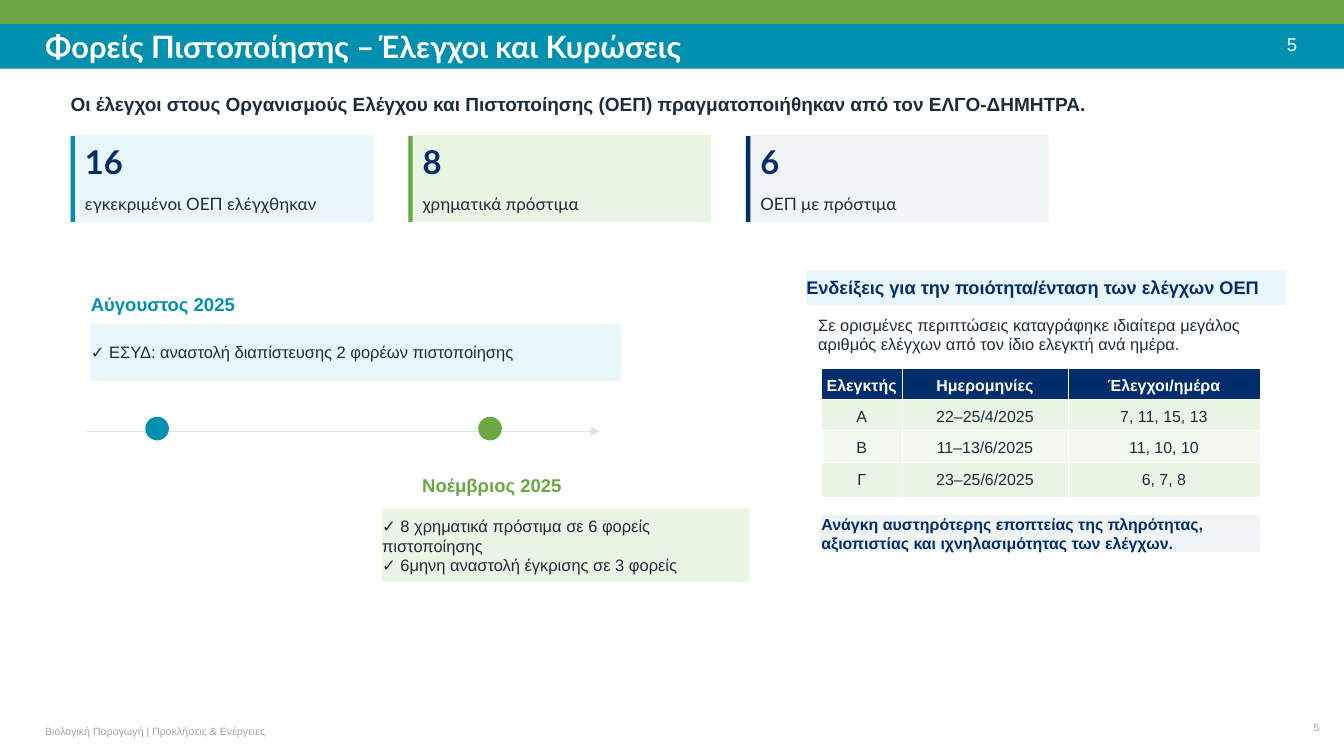
from lxml import etree
from pptx import Presentation
from pptx.dml.color import RGBColor
from pptx.enum.shapes import MSO_CONNECTOR, MSO_SHAPE
from pptx.enum.text import MSO_ANCHOR, PP_ALIGN
from pptx.oxml.ns import qn
from pptx.util import Cm, Pt

RECT, OVAL = MSO_SHAPE.RECTANGLE, MSO_SHAPE.OVAL
STRAIGHT = MSO_CONNECTOR.STRAIGHT
MIDDLE = MSO_ANCHOR.MIDDLE
LEFT, CENTER, RIGHT = PP_ALIGN.LEFT, PP_ALIGN.CENTER, PP_ALIGN.RIGHT

WHITE = RGBColor(0xFF, 0xFF, 0xFF)
GREEN = RGBColor(0x6B, 0xA8, 0x43)
TEAL = RGBColor(0x00, 0x90, 0xAF)
NAVY = RGBColor(0x00, 0x2E, 0x6D)
INK = RGBColor(0x1D, 0x2C, 0x3B)
PALE_TEAL = RGBColor(0xE9, 0xF6, 0xFA)
PALE_GREEN = RGBColor(0xEA, 0xF5, 0xE4)
FAINT_GREEN = RGBColor(0xF3, 0xF8, 0xF0)
PALE_GREY = RGBColor(0xF2, 0xF5, 0xF6)
AXIS_GREY = RGBColor(0xD7, 0xE3, 0xE5)
FOOTER_GREY = RGBColor(0x9B, 0xA8, 0xAF)


def add_block(kind, box, fill, outline=None):
    """Add a filled shape at box (cm), with a same-coloured outline in points if given."""
    shape = slide.shapes.add_shape(kind, *map(Cm, box))
    shape.shadow.inherit = False
    shape.fill.solid()
    shape.fill.fore_color.rgb = fill
    if outline:
        shape.line.color.rgb = fill
        shape.line.width = Pt(outline)
    else:
        shape.line.fill.background()
    return shape


def write(text, box=None, frame=None, size=11.4, color=INK, bold=False, font="Arial", align=LEFT):
    """Write text, one paragraph a line, into frame or a new text box at box (cm)."""
    if frame is None:
        frame = slide.shapes.add_textbox(*map(Cm, box)).text_frame
    frame.word_wrap = True
    frame.vertical_anchor = MIDDLE
    frame.margin_left = frame.margin_right = frame.margin_top = frame.margin_bottom = 0
    frame.text = text
    for paragraph in frame.paragraphs:
        paragraph.alignment = align
        for run in paragraph.runs:
            run.font.name = font
            run.font.size = Pt(size)
            run.font.bold = bold
            run.font.color.rgb = color


prs = Presentation()
prs.slide_width, prs.slide_height = Cm(33.87), Cm(19.05)
slide = prs.slides.add_slide(prs.slide_layouts[5])

# Header
title = slide.shapes.title
title.left, title.top, title.width, title.height = Cm(1.14), Cm(0.64), Cm(26.92), Cm(1.07)
for top, height, fill in [(0, 0.61, GREEN), (0.61, 1.12, TEAL)]:
    band = add_block(RECT, (0, top, 33.87, height), fill)
    title.element.addprevious(band.element)
write("Φορείς Πιστοποίησης – Έλεγχοι και Κυρώσεις", frame=title.text_frame,
      size=22, color=WHITE, bold=True, font="Lato")
write("5", (31.88, 0.81, 0.81, 0.61), size=13.2, color=WHITE, align=RIGHT)
write("Οι έλεγχοι στους Οργανισμούς Ελέγχου και Πιστοποίησης (ΟΕΠ) "
      "πραγματοποιήθηκαν από τον ΕΛΓΟ-ΔΗΜΗΤΡΑ.",
      (1.78, 1.96, 30.61, 1.32), size=13.6, bold=True)

# Key figures
figures = [
    ("16", "εγκεκριμένοι ΟΕΠ ελέγχθηκαν", TEAL, PALE_TEAL),
    ("8", "χρηματικά πρόστιμα", GREEN, PALE_GREEN),
    ("6", "ΟΕΠ με πρόστιμα", NAVY, PALE_GREY),
]
for i, (number, label, accent, fill) in enumerate(figures):
    left = 1.78 + 8.51 * i
    add_block(RECT, (left, 3.43, 7.62, 2.16), fill, 1)
    add_block(RECT, (left, 3.43, 0.11, 2.16), accent)
    write(number, (left + 0.36, 3.63, 7.01, 0.86), size=23.4, color=NAVY, bold=True, font="Lato")
    write(label, (left + 0.36, 4.6, 7.01, 1.07), size=12.2, font="Lato")

# Timeline
axis = slide.shapes.add_connector(STRAIGHT, Cm(2.16), Cm(10.87), Cm(15.11), Cm(10.87))
axis.line.color.rgb = AXIS_GREY
axis.line.width = Pt(1.2)
etree.SubElement(axis.line._get_or_add_ln(), qn("a:tailEnd"), type="triangle")
etree.SubElement(axis.element.spPr, qn("a:effectLst"))

events = [
    ("Αύγουστος 2025", (2.29, 7.37, 4.06, 0.61), 3.68, TEAL,
     "✓ ΕΣΥΔ: αναστολή διαπίστευσης 2 φορέων πιστοποίησης",
     (2.29, 8.18, 13.34, 1.4), PALE_TEAL),
    ("Νοέμβριος 2025", (10.64, 11.91, 4.57, 0.61), 12.07, GREEN,
     "✓ 8 χρηματικά πρόστιμα σε 6 φορείς πιστοποίησης\n"
     "✓ 6μηνη αναστολή έγκρισης σε 3 φορείς",
     (9.63, 12.83, 9.27, 1.83), PALE_GREEN),
]
for month, month_box, dot_left, accent, details, details_box, fill in events:
    write(month, month_box, size=13.2, color=accent, bold=True)
    panel = add_block(RECT, details_box, fill, 0.75)
    write(details, frame=panel.text_frame, size=11.8)
    add_block(OVAL, (dot_left, 10.52, 0.56, 0.56), accent, 1)

# Inspection intensity
heading = add_block(RECT, (20.32, 6.81, 12.07, 0.86), PALE_TEAL, 0.75)
write("Ενδείξεις για την ποιότητα/ένταση των ελέγχων ΟΕΠ", frame=heading.text_frame,
      size=13, color=NAVY, bold=True)
write("Σε ορισμένες περιπτώσεις καταγράφηκε ιδιαίτερα μεγάλος αριθμός ελέγχων "
      "από τον ίδιο ελεγκτή ανά ημέρα.", (20.62, 7.77, 11.56, 1.32), size=11.7)

inspections = [
    ("Ελεγκτής", "Ημερομηνίες", "Έλεγχοι/ημέρα"),
    ("Α", "22–25/4/2025", "7, 11, 15, 13"),
    ("Β", "11–13/6/2025", "11, 10, 10"),
    ("Γ", "23–25/6/2025", "6, 7, 8"),
]
row_fills = [NAVY, PALE_GREEN, FAINT_GREEN, PALE_GREEN]
row_heights = [0.79, 0.79, 0.79, 0.89]
table = slide.shapes.add_table(4, 3, Cm(20.7), Cm(9.27), Cm(11.05), Cm(3.26)).table
for column, width in zip(table.columns, [2.03, 4.19, 4.83]):
    column.width = Cm(width)
for r, values in enumerate(inspections):
    table.rows[r].height = Cm(row_heights[r])
    for c, value in enumerate(values):
        cell = table.cell(r, c)
        write(value, frame=cell.text_frame, color=INK if r else WHITE, bold=r == 0, align=CENTER)
        cell.vertical_anchor = MIDDLE
        cell.margin_left = cell.margin_right = cell.margin_bottom = 0
        cell.margin_top = Cm(0.1 if r < 3 else 0)
        properties = cell._tc.get_or_add_tcPr()
        for side in ("a:lnL", "a:lnR", "a:lnT", "a:lnB"):
            border = etree.SubElement(properties, qn(side), w=str(Pt(0.5)))
            border_fill = etree.SubElement(border, qn("a:solidFill"))
            etree.SubElement(border_fill, qn("a:srgbClr"), val=str(WHITE))
        cell.fill.solid()
        cell.fill.fore_color.rgb = row_fills[r]

conclusion = add_block(RECT, (20.7, 13, 11.05, 0.89), PALE_GREY, 0.75)
write("Ανάγκη αυστηρότερης εποπτείας της πληρότητας, αξιοπιστίας και ιχνηλασιμότητας των ελέγχων.",
      frame=conclusion.text_frame, color=NAVY, bold=True)

# Footer
write("Βιολογική Παραγωγή | Προκλήσεις & Ενέργειες", (1.14, 18.26, 9.65, 0.36),
      size=7.5, color=FOOTER_GREY)
write("5", (32.64, 18.16, 0.61, 0.36), size=7.5, color=FOOTER_GREY, align=RIGHT)

prs.save("out.pptx")
